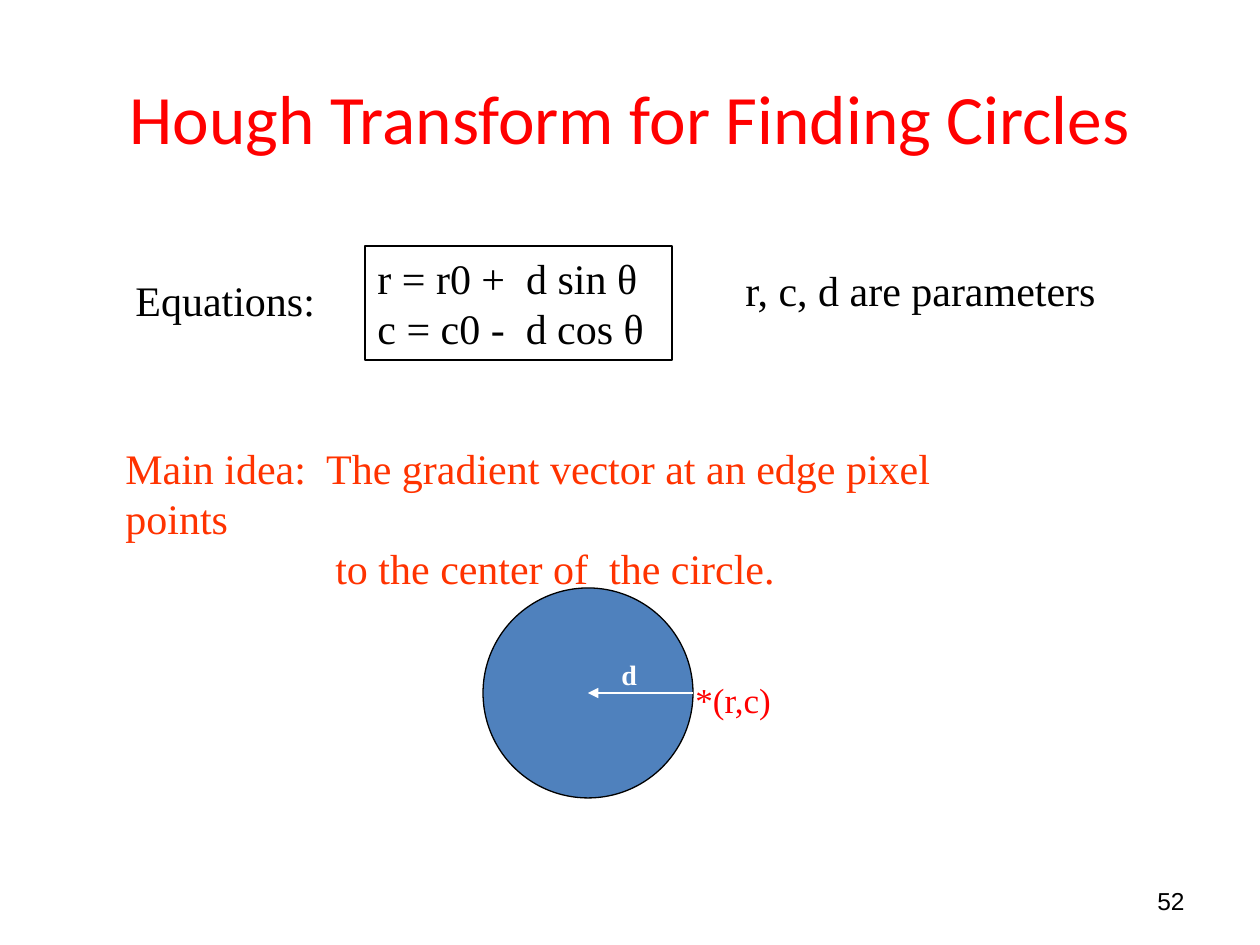
from lxml.etree import SubElement
from pptx import Presentation
from pptx.dml.color import RGBColor
from pptx.enum.shapes import MSO_CONNECTOR as Connector, MSO_SHAPE as Shape
from pptx.enum.text import MSO_ANCHOR as Anchor, PP_ALIGN as Align
from pptx.oxml.ns import qn
from pptx.util import Emu, Pt

SCALE = 914400 / 126
COLORS = {
    "title": "FF0000",
    "text": "000000",
    "idea": "FF3300",
    "circle": "4F81BD",
    "outline": "000000",
    "radius": "FFFFFF",
    "point": "FF0000",
}


def px(*lengths):
    return [Emu(round(length * SCALE)) for length in lengths]


def color(name):
    return RGBColor.from_string(COLORS[name])


def set_line(shape, name):
    shape.line.color.rgb = color(name)
    shape.line.width = Pt(0.75)


def add_text(slide, text, box, size=24, font="Times New Roman", fill="text",
             bold=False, align=Align.LEFT, anchor=Anchor.TOP, wrap=False,
             last_indent=0):
    shape = slide.shapes.add_textbox(*px(*box))
    frame = shape.text_frame
    frame.word_wrap = wrap
    frame.vertical_anchor = anchor
    frame.text = text
    for paragraph in frame.paragraphs:
        paragraph.alignment = align
        run_font = paragraph.runs[0].font
        run_font.name = font
        run_font.size = Pt(size)
        run_font.bold = bold
        run_font.color.rgb = color(fill)
    if last_indent:
        properties = frame.paragraphs[-1]._p.get_or_add_pPr()
        properties.set("marL", str(px(last_indent)[0]))
    return shape


def add_title(slide, box):
    add_text(slide, "Hough Transform for Finding Circles", box, size=39.6,
             font="Calibri", fill="title", align=Align.CENTER,
             anchor=Anchor.MIDDLE, wrap=True)


def add_equations(slide, left, top):
    add_text(slide, "Equations:", (left, top + 22, 215, 63))
    equations = add_text(slide, "r = r0 +  d sin θ\nc = c0 -  d cos θ",
                         (left + 242, top, 307, 114))
    set_line(equations, "outline")
    add_text(slide, "r, c, d are parameters", (left + 610, top + 12, 377, 63))


def add_main_idea(slide, box):
    add_text(slide,
             "Main idea:  The gradient vector at an edge pixel points\n"
             "to the center of  the circle.",
             box, fill="idea", last_indent=210)


def add_circle_diagram(slide, left, top, diameter):
    radius = diameter // 2
    middle = top + radius
    circle = slide.shapes.add_shape(
        Shape.OVAL, *px(left, top, diameter, diameter))
    circle.shadow.inherit = False
    circle.fill.solid()
    circle.fill.fore_color.rgb = color("circle")
    set_line(circle, "outline")

    add_text(slide, "*(r,c)", (left + diameter - 10, middle - 21, 102, 54),
             size=20, fill="point")

    arrow = slide.shapes.add_connector(
        Connector.STRAIGHT,
        *px(left + diameter, middle, left + radius, middle))
    set_line(arrow, "radius")
    SubElement(arrow.line._get_or_add_ln(), qn("a:tailEnd"), type="triangle")
    SubElement(arrow._element.spPr, qn("a:effectLst"))

    add_text(slide, "d", (left + radius + 21, middle - 42, 40, 47),
             size=16, fill="radius", bold=True)


def add_page_number(slide, box):
    add_text(slide, "52", box, size=14, font="Arial", align=Align.RIGHT,
             anchor=Anchor.MIDDLE, wrap=True)


def main():
    presentation = Presentation()
    presentation.slide_width, presentation.slide_height = px(1260, 945)
    slide = presentation.slides.add_slide(presentation.slide_layouts[6])
    add_title(slide, (63, 38, 1134, 158))
    add_equations(slide, 123, 246)
    add_main_idea(slide, (113, 436, 942, 113))
    add_circle_diagram(slide, 483, 588, 210)
    add_page_number(slide, (903, 876, 294, 50))
    presentation.save("out.pptx")


if __name__ == "__main__":
    main()
